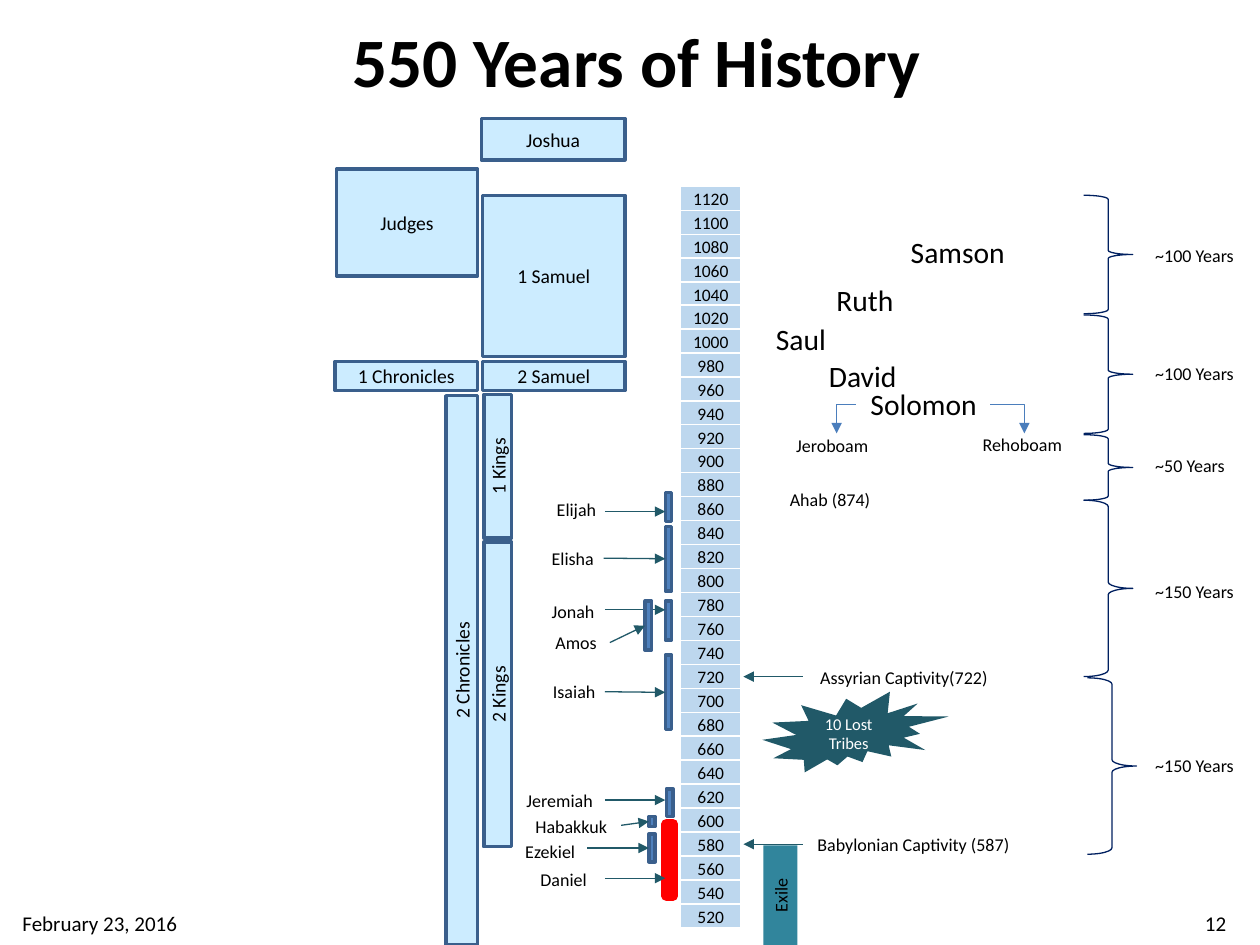
from lxml import etree
from pptx import Presentation
from pptx.dml.color import RGBColor
from pptx.enum import shapes as sh, text as tx
from pptx.oxml import ns
from pptx.util import Inches, Pt

FONT = "Calibri"
HUES = {
    "ink": "000000", "white": "FFFFFF", "years": "BDD7EE", "book": "CCECFF",
    "edge": "3A5F8C", "bar": "4F81BD", "exile": "31859C", "dark": "215968",
    "brace": "002060", "split": "4B7EBC", "red": "FF0000",
}
LEFT, MID, RIGHT = tx.PP_ALIGN.LEFT, tx.PP_ALIGN.CENTER, tx.PP_ALIGN.RIGHT
TOP, CORE, LOW = tx.MSO_ANCHOR.TOP, tx.MSO_ANCHOR.MIDDLE, tx.MSO_ANCHOR.BOTTOM
SHAPE = sh.MSO_SHAPE


def hue(name):
    """Return the named colour."""
    return RGBColor.from_string(HUES[name])


def write(frame, words, size, align=LEFT, color="ink", bold=False):
    """Put one run of text in a frame."""
    para = frame.paragraphs[0]
    para.alignment = align
    run = para.add_run()
    run.text = words
    font = run.font
    font.name, font.size, font.bold = FONT, Pt(size), bold
    font.color.rgb = hue(color)


def label(slide, box, words, size=10.3, align=LEFT, wrap=False, anchor=TOP, bold=False):
    """Add a text box."""
    frame = slide.shapes.add_textbox(*map(Inches, box)).text_frame
    frame.word_wrap = wrap
    frame.vertical_anchor = anchor
    write(frame, words, size, align, bold=bold)


def block(slide, box, fill=None, line=None, width=2, kind=SHAPE.RECTANGLE):
    """Add a preset shape with its fill and line."""
    shape = slide.shapes.add_shape(kind, *map(Inches, box))
    shape.shadow.inherit = False
    if fill:
        shape.fill.solid()
        shape.fill.fore_color.rgb = hue(fill)
    else:
        shape.fill.background()
    if line:
        shape.line.color.rgb = hue(line)
        shape.line.width = Pt(width)
    else:
        shape.line.fill.background()
    return shape


def upright(slide, box, words, size, fill, line=None, anchor=CORE):
    """Add a tall block whose text reads upwards."""
    x, y, w, h = box
    shift = (h - w) / 2
    shape = block(slide, (x - shift, y + shift, h, w), fill, line)
    shape.rotation = 270
    shape.text_frame.vertical_anchor = anchor
    write(shape.text_frame, words, size, MID)


def arrow(slide, start, end, color="dark", bent=False):
    """Add a connector with an arrowhead at its end."""
    kind = sh.MSO_CONNECTOR.ELBOW if bent else sh.MSO_CONNECTOR.STRAIGHT
    link = slide.shapes.add_connector(kind, *map(Inches, start + end))
    link.line.color.rgb = hue(color)
    link.line.width = Pt(0.75)
    props = link._element.spPr
    if bent:
        props.find(ns.qn("a:prstGeom")).set("prst", "bentConnector2")
    etree.SubElement(props.find(ns.qn("a:ln")), ns.qn("a:tailEnd"), type="triangle")
    etree.SubElement(props, ns.qn("a:effectLst"))
    return link


def years(slide, box, first, last):
    """Add a column of years, twenty apart."""
    dates = range(first, last - 1, -20)
    table = slide.shapes.add_table(len(dates), 1, *map(Inches, box)).table
    table.first_row = table.horz_banding = False
    for row, date in zip(table.rows, dates):
        row.height = Inches(box[3] / len(dates))
        cell = row.cells[0]
        cell.fill.solid()
        cell.fill.fore_color.rgb = hue("years")
        cell.margin_left = cell.margin_right = cell.margin_top = Inches(0.01)
        cell.margin_bottom = 0
        cell.vertical_anchor = LOW
        write(cell.text_frame, str(date), 10, MID)


def books(slide, x, y):
    """Add the blocks for the books."""
    for name, dx, dy, w, h in (
        ("1 Samuel", 1.17, 0.61, 1.13, 1.28),
        ("2 Samuel", 1.17, 1.93, 1.13, 0.23),
        ("1 Chronicles", 0, 1.93, 1.13, 0.23),
        ("Judges", 0.01, 0.4, 1.12, 0.85),
        ("Joshua", 1.16, 0, 1.14, 0.33),
    ):
        shape = block(slide, (x + dx, y + dy, w, h), "book", "edge")
        shape.text_frame.vertical_anchor = CORE
        write(shape.text_frame, name, 11.2, MID)
    for name, dx, dy, w, h in (
        ("1 Kings", 1.18, 2.19, 0.22, 1.14),
        ("2 Kings", 1.18, 3.36, 0.22, 2.42),
        ("2 Chronicles", 0.88, 2.2, 0.25, 4.36),
    ):
        upright(slide, (x + dx, y + dy, w, h), name, 11.2, "book", "edge")


def prophets(slide, x, y):
    """Add each prophet's name, life bar and arrow."""
    for name, at, wide, bar, tail, joined in (
        ("Elijah", (0.25, 0.01), 0.52, (1.21, 0.01, 0.23), (0.73, 0.16), False),
        ("Elisha", (0.21, 0.4), 0.54, (1.21, 0.28, 0.51), (0.72, 0.53), True),
        ("Jonah", (0.21, 0.82), 0.54, (1.21, 0.87, 0.31), (0.73, 0.94), False),
        ("Isaiah", (0.22, 1.45), 0.54, (1.21, 1.3, 0.59), (0.73, 1.59), True),
        ("Jeremiah", (0.01, 2.32), 0.74, (1.22, 2.36, 0.22), (0.73, 2.45), False),
        ("Amos", (0.24, 1.06), 0.53, (1.05, 0.87, 0.39), (0.77, 1.2), True),
        ("Habakkuk", (0.08, 2.52), 0.78, (1.08, 2.58, 0.08), (0.86, 2.65), True),
        ("Daniel", (0.12, 2.94), 0.58, (1.22, 2.64, 0.57), (0.73, 3.07), False),
        ("Ezekiel", (0, 2.72), 0.61, (1.08, 2.72, 0.22), (0.59, 2.83), True),
    ):
        look = ("red", "red", 6) if name == "Daniel" else ("bar", "edge", 2)
        left, top, tall = bar
        life = block(slide, (x + left, y + top, 0.05, tall), *look)
        label(slide, (x + at[0], y + at[1], wide, 0.27), name)
        start = (x + tail[0], y + tail[1])
        link = arrow(slide, start, (x + 1.21, start[1]))
        if joined:
            link.end_connect(life, 1)


def people(slide, x, y):
    """Add the rulers and the split of the kingdom."""
    for name, dx, dy, w, size in (
        ("Samson", 1.08, 0, 0.96, 16.9),
        ("Ruth", 0.49, 0.38, 0.66, 16.9),
        ("Saul", 0.01, 0.69, 0.6, 16.9),
        ("David", 0.43, 0.98, 0.74, 16.9),
        ("Solomon", 0.76, 1.2, 1.05, 16.9),
        ("Rehoboam", 1.65, 1.58, 0.84, 10.3),
        ("Jeroboam", 0.17, 1.59, 0.78, 10.3),
        ("Ahab (874)", 0.12, 2.02, 0.85, 10.3),
    ):
        label(slide, (x + dx, y + dy, w, 0.39 if size > 12 else 0.27), name, size)
    for start, end in ((1.81, 2.08), (0.74, 0.59)):
        arrow(slide, (x + start, y + 1.4), (x + end, y + 1.63), "split", True)


def exile(slide, x, y):
    """Add the captivities, the lost tribes and the exile."""
    for words, dx, dy, w in (
        ("Assyrian Captivity(722)", 0.25, 0, 2.05),
        ("Babylonian Captivity (587)", 0.24, 1.33, 2.22),
    ):
        label(slide, (x + dx, y + dy, w, 0.27), words, align=MID, wrap=True)
        arrow(slide, (x + 0.47, y + dy + 0.13), (x, y + dy + 0.13))
    burst = block(slide, (x + 0.15, y + 0.25, 1.48, 0.64), "dark", kind=SHAPE.EXPLOSION2)
    burst.text_frame.vertical_anchor = CORE
    write(burst.text_frame, "10 Lost Tribes", 9.4, MID, "white")
    upright(slide, (x + 0.16, y + 1.47, 0.27, 0.79), "Exile", 10.3, "exile", anchor=TOP)


def spans(slide, x, y):
    """Add the braces and their lengths in years."""
    for count, dx, top, tall, low in (
        (100, 0, 0, 0.94, 0.34),
        (100, 0, 0.95, 0.94, 1.28),
        (50, 0, 1.9, 0.52, 2.01),
        (150, 0, 2.42, 1.4, 3.01),
        (150, 0.03, 3.83, 1.4, 4.39),
    ):
        brace = block(slide, (x + dx, y + top, 0.39, tall), None, "brace", 0.75, SHAPE.RIGHT_BRACE)
        if count == 150:
            brace.adjustments[0] = 0.13
        label(slide, (x + 0.47, y + low, 0.85, 0.27), f"~{count} Years")


def main():
    """Build the slide."""
    deck = Presentation()
    deck.slide_width, deck.slide_height = Inches(10), Inches(7.5)
    slide = deck.slides.add_slide(deck.slide_layouts[6])
    label(slide, (1.08, 0.17, 7.95, 0.61), "550 Years of History", 39.6, MID, True, CORE, True)
    years(slide, (5.4, 1.48, 0.48, 0.95), 1120, 1040)
    years(slide, (5.4, 2.42, 0.48, 4.95), 1020, 520)
    books(slide, 2.66, 0.94)
    prophets(slide, 4.07, 3.9)
    people(slide, 6.05, 1.81)
    exile(slide, 5.9, 5.24)
    spans(slide, 8.6, 1.55)
    label(slide, (0.08, 7.13, 1.58, 0.4), "February 23, 2016", 12, LEFT, True, CORE)
    label(slide, (9.08, 7.13, 0.75, 0.4), "12", 12, RIGHT, True, CORE)
    deck.save("out.pptx")


if __name__ == "__main__":
    main()
